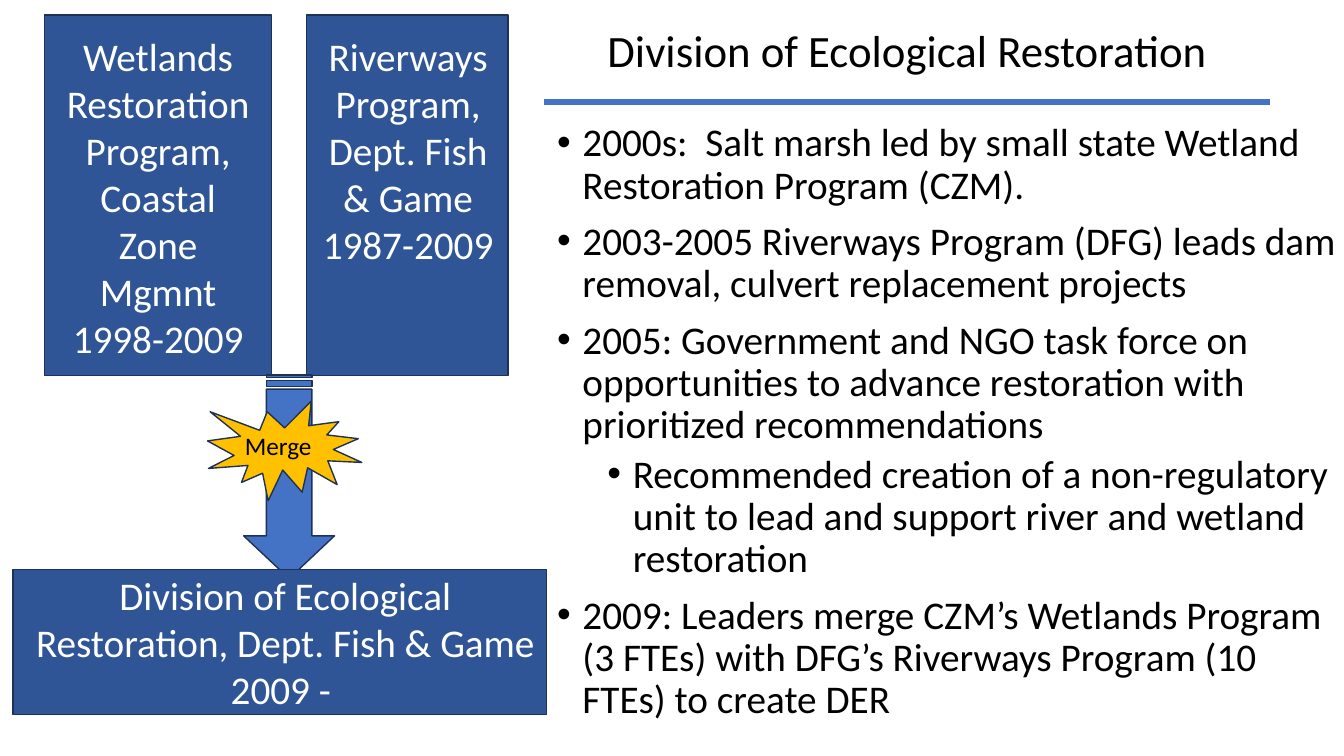
from lxml.etree import SubElement
from pptx import Presentation
from pptx.dml.color import RGBColor
from pptx.enum.shapes import MSO_CONNECTOR, MSO_SHAPE as SHAPE
from pptx.enum.text import MSO_ANCHOR as ANCHOR, PP_ALIGN as ALIGN
from pptx.oxml.ns import qn
from pptx.util import Cm, Pt

COLORS = {
    "box": "2F5597", "accent": "4472C4", "outline": "1E3256",
    "burst": "FFC000", "light": "FFFFFF", "dark": "000000",
}
FONT = "Calibri"

TITLE = "Division of Ecological Restoration"
TIMELINE = [
    (0, "2000s:  Salt marsh led by small state Wetland Restoration Program (CZM)."),
    (0, "2003-2005 Riverways Program (DFG) leads dam removal, culvert replacement projects"),
    (0, "2005: Government and NGO task force on opportunities to advance restoration "
        "with prioritized recommendations"),
    (1, "Recommended creation of a non-regulatory unit to lead and support river "
        "and wetland restoration"),
    (0, "2009: Leaders merge CZM’s Wetlands Program (3 FTEs) with DFG’s Riverways "
        "Program (10 FTEs) to create DER"),
]
PROGRAMS = [
    ((1.12, 0.38, 5.72, 9.09), (1.37, 0.69, 5.23, 8.64),
     ["Wetlands Restoration Program, Coastal Zone Mgmnt", "1998-2009"]),
    ((7.72, 0.38, 5.08, 9.09), (7.67, 0.69, 5.23, 6.25),
     ["Riverways Program, Dept. Fish & Game", "1987-2009"]),
]
DIVISION = ((0.33, 14.35, 13.44, 3.66), (0.33, 14.27, 13.72, 3.84),
            ["Division of Ecological Restoration, Dept. Fish & Game", "2009 - "])

prs = Presentation()
prs.slide_width, prs.slide_height = Cm(33.87), Cm(19.05)
s = prs.slides.add_slide(prs.slide_layouts[6])


def rgb(name):
    return RGBColor.from_string(COLORS[name])


def add_run(p, text, size, color):
    r = p.add_run()
    r.text = text
    r.font.size = Pt(size)
    r.font.name = FONT
    r.font.color.rgb = rgb(color)


def add_shape(kind, at, fill):
    sp = s.shapes.add_shape(kind, *map(Cm, at))
    sp.shadow.inherit = False
    sp.fill.solid()
    sp.fill.fore_color.rgb = rgb(fill)
    sp.line.color.rgb = rgb("outline")
    sp.line.width = Pt(1)
    return sp


def add_text(at, lines, size, color, align=ALIGN.CENTER):
    tf = s.shapes.add_textbox(*map(Cm, at)).text_frame
    tf.word_wrap = True
    for i, line in enumerate(lines):
        p = tf.paragraphs[0] if i == 0 else tf.add_paragraph()
        p.alignment = align
        add_run(p, line, size, color)
    return tf


def add_bullet(p, level):
    p.level = level
    pPr = p._p.get_or_add_pPr()
    pPr.set("marL", str(Cm(0.64 + 1.27 * level)))
    pPr.set("indent", str(-Cm(0.64)))
    SubElement(pPr, qn("a:buFont")).set("typeface", "Arial")
    SubElement(pPr, qn("a:buChar")).set("char", "•")


tf = add_text((13.72, 0.51, 18.29, 1.65), [TITLE], 32, "dark")
tf.vertical_anchor = ANCHOR.MIDDLE
tf.paragraphs[0].line_spacing = 0.9

tf = add_text((13.79, 2.97, 20.42, 16.08), [text for _, text in TIMELINE],
              28, "dark", ALIGN.LEFT)
for i, (p, (level, _)) in enumerate(zip(tf.paragraphs, TIMELINE)):
    add_bullet(p, level)
    p.line_spacing = 0.9
    if i:
        p.space_before = Pt(5 if level else 10)

rule = s.shapes.add_connector(MSO_CONNECTOR.STRAIGHT, Cm(13.72), Cm(2.57), Cm(32), Cm(2.57))
rule.line.color.rgb = rgb("accent")
rule.line.width = Pt(4.25)
SubElement(rule._element.spPr, qn("a:effectLst"))

for box, _, _ in PROGRAMS:
    add_shape(SHAPE.RECTANGLE, box, "box")
for _, label, lines in PROGRAMS:
    add_text(label, lines, 28, "light")

arrow = add_shape(SHAPE.STRIPED_RIGHT_ARROW, (4.72, 10.87, 5.13, 2.29), "accent")
arrow.rotation = 90
arrow.adjustments[0] = 0.5
arrow.adjustments[1] = 0.47

box, label, lines = DIVISION
add_shape(SHAPE.RECTANGLE, box, "box")
add_text(label, lines, 28, "light")

add_shape(SHAPE.EXPLOSION1, (5.23, 10.11, 3.89, 2.51), "burst")
add_text((5.92, 10.72, 2.29, 1.02), ["Merge"], 18, "dark", ALIGN.LEFT)

prs.save("out.pptx")
